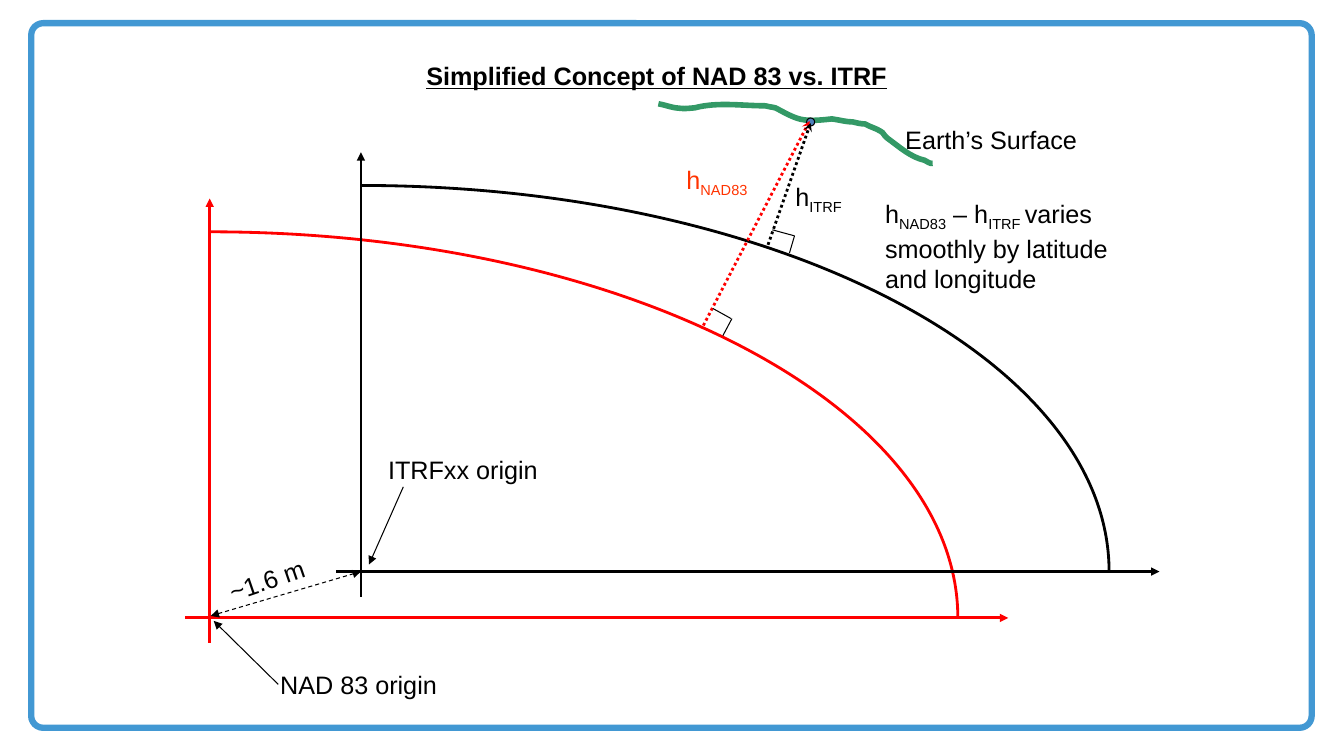
"""Draws the simplified NAD 83 and ITRF reference frame diagram."""
from dataclasses import dataclass

from pptx import Presentation
from pptx.dml.color import RGBColor
from pptx.enum.dml import MSO_LINE as Dash
from pptx.enum.shapes import MSO_CONNECTOR as Connector, MSO_SHAPE as Shape
from pptx.enum.text import MSO_AUTO_SIZE as AutoSize
from pptx.oxml import parse_xml
from pptx.oxml.ns import nsdecls, qn
from pptx.util import Inches, Pt


@dataclass(frozen=True)
class Theme:
    """Colours, font and sizes."""
    black: str = "000000"
    red: str = "FF0000"
    orange: str = "FF3300"
    green: str = "339966"
    marker: str = "4F81BD"
    border: str = "4298D3"
    font: str = "Arial"
    text: float = 18
    thin: float = 0.75
    bold: float = 2
    surface: float = 4
    frame: float = 4.5


THEME = Theme()

FRAMES = [((2.08, 6.13), THEME.red), ((3.58, 5.67), THEME.black)]
ARC_WIDTH, ARC_HEIGHT = 7.42, 3.83
AXIS_RIGHT, AXIS_UP, AXIS_TAIL = 7.92, 4.16, 0.25
BEZIER_X, BEZIER_Y = 4.1, 2.11

SURFACE = [
    (6.53, 1.03), (6.59, 1.04), (6.64, 1.06), (6.7, 1.07),
    (6.8, 1.08), (6.77, 1.08), (6.89, 1.07), (7.12, 1.01), (7.36, 1.05), (7.59, 1.05),
    (7.62, 1.06), (7.65, 1.06), (7.69, 1.07), (7.77, 1.11), (7.88, 1.18), (7.98, 1.19),
    (8.06, 1.2), (8.16, 1.19), (8.25, 1.18), (8.33, 1.19), (8.39, 1.21), (8.46, 1.21),
    (8.5, 1.22), (8.54, 1.23), (8.58, 1.23), (8.63, 1.26), (8.68, 1.27), (8.73, 1.3),
    (8.77, 1.32), (8.76, 1.34), (8.8, 1.37), (8.91, 1.45), (9.03, 1.56), (9.17, 1.59),
    (9.19, 1.6), (9.23, 1.63), (9.25, 1.62),
]

DOTTED = dict(width=THEME.bold, dash=Dash.ROUND_DOT, head="stealth")
LINES = [
    ((2.09, 6.11), (3.58, 5.67), dict(dash=Dash.DASH, head="triangle", tail="triangle")),
    ((8.03, 1.2), (6.96, 3.26), dict(color=THEME.red, **DOTTED)),
    ((7.17, 3.33), (7.26, 3.16), {}),
    ((7.07, 3.06), (7.25, 3.16), {}),
    ((7.83, 2.51), (7.88, 2.34), {}),
    ((7.66, 2.28), (7.88, 2.34), {}),
    ((8.04, 1.22), (7.61, 2.45), DOTTED),
    ((4, 4.83), (3.66, 5.6), dict(tail="triangle")),
    ((2.76, 6.79), (2.12, 6.16), dict(tail="triangle")),
]

NORMAL, SUB = 0, -25000
LABELS = [
    ((2.16, 5.55, 0.98, 0.4), [[("~1.6 m", NORMAL)]], dict(rotation=340.9)),
    ((2.68, 6.59, 1.76, 0.4), [[("NAD 83 origin", NORMAL)]], {}),
    ((3.75, 4.46, 1.69, 0.4), [[("ITRFxx origin", NORMAL)]], {}),
    ((8.88, 1.18, 1.91, 0.4), [[("Earth’s Surface", NORMAL)]], {}),
    ((6.71, 1.58, 0.88, 0.4), [[("h", NORMAL), ("NAD83", SUB)]], dict(color=THEME.orange)),
    ((7.79, 1.75, 0.71, 0.4), [[("h", NORMAL), ("ITRF", SUB)]], {}),
    ((4.13, 0.55, 4.77, 0.4), [[("Simplified Concept of NAD 83 vs. ITRF", NORMAL)]],
     dict(title=True)),
    ((8.68, 1.92, 2.48, 1), [
        [("h", NORMAL), ("NAD83", SUB), (" – h", NORMAL), ("ITRF ", SUB), ("varies", NORMAL)],
        [("smoothly by latitude", NORMAL)],
        [("and longitude", NORMAL)],
    ], {}),
]


def style_outline(shape, color, width):
    """Give a shape a plain outline without a shadow."""
    shape.shadow.inherit = False
    shape.line.color.rgb = RGBColor.from_string(color)
    shape.line.width = Pt(width)


def add_shape(shapes, kind, box, color, width):
    """Add an unfilled preset shape."""
    shape = shapes.add_shape(kind, *map(Inches, box))
    shape.fill.background()
    style_outline(shape, color, width)
    return shape


def add_curve(shapes, points, color, width):
    """Add an open curve whose points after the first come in Bezier triples."""
    start, *rest = [(Inches(x), Inches(y)) for x, y in points]
    builder = shapes.build_freeform(*start)
    builder.add_line_segments(rest, close=False)
    curve = builder.convert_to_shape()
    curve.fill.background()
    style_outline(curve, color, width)
    segments = list(curve._element.iter(qn("a:lnTo")))
    for index in range(0, len(segments), 3):
        bezier = parse_xml(f"<a:cubicBezTo {nsdecls('a')}/>")
        segments[index].addprevious(bezier)
        for segment in segments[index:index + 3]:
            bezier.append(segment[0])
            segment.getparent().remove(segment)


def add_line(shapes, start, end, color=THEME.black, width=THEME.thin,
             dash=None, head=None, tail=None):
    """Add a straight line with optional dashes and arrowheads."""
    line = shapes.add_connector(Connector.STRAIGHT, *map(Inches, start + end))
    line.line.color.rgb = RGBColor.from_string(color)
    line.line.width = Pt(width)
    if dash:
        line.line.dash_style = dash
    properties = line._element.spPr
    outline = properties.find(qn("a:ln"))
    for tag, arrow in (("headEnd", head), ("tailEnd", tail)):
        if arrow:
            outline.append(parse_xml(f'<a:{tag} {nsdecls("a")} type="{arrow}"/>'))
    properties.append(parse_xml(f"<a:effectLst {nsdecls('a')}/>"))


def add_frame(slide, origin, color):
    """Add a quarter ellipse with its two axes as one group."""
    x, y = origin
    shapes = slide.shapes.add_group_shape().shapes
    top, right = y - ARC_HEIGHT, x + ARC_WIDTH
    arc = [(x, top), (x + BEZIER_X, top), (right, y - BEZIER_Y), (right, y)]
    add_curve(shapes, arc, color, THEME.bold)
    axes = [((x, y - AXIS_UP), (x, y + AXIS_TAIL)),
            ((x + AXIS_RIGHT, y), (x - AXIS_TAIL, y))]
    for start, end in axes:
        add_line(shapes, start, end, color, THEME.bold, head="triangle")


def add_label(slide, box, paragraphs, color=THEME.black, title=False, rotation=0):
    """Add a text box with normal and subscript runs."""
    label = slide.shapes.add_textbox(*map(Inches, box))
    label.rotation = rotation
    frame = label.text_frame
    frame.word_wrap = False
    frame.auto_size = AutoSize.SHAPE_TO_FIT_TEXT
    for index, runs in enumerate(paragraphs):
        paragraph = frame.add_paragraph() if index else frame.paragraphs[0]
        for text, baseline in runs:
            run = paragraph.add_run()
            run.text = text
            font = run.font
            font.name, font.size = THEME.font, Pt(THEME.text)
            font.color.rgb = RGBColor.from_string(color)
            if title:
                font.bold = font.underline = True
            if baseline:
                run._r.get_or_add_rPr().set("baseline", str(baseline))


def main():
    """Build and save the slide."""
    presentation = Presentation()
    presentation.slide_width, presentation.slide_height = Inches(13.33), Inches(7.5)
    slide = presentation.slides.add_slide(presentation.slide_layouts[6])
    shapes = slide.shapes
    border = add_shape(shapes, Shape.ROUNDED_RECTANGLE, (0.31, 0.23, 12.7, 6.99),
                       THEME.border, THEME.frame)
    border.adjustments[0] = 0.017
    for origin, color in FRAMES:
        add_frame(slide, origin, color)
    add_curve(shapes, SURFACE, THEME.green, THEME.surface)
    marker = add_shape(shapes, Shape.OVAL, (8, 1.17, 0.08, 0.08), THEME.black, THEME.thin)
    marker.fill.solid()
    marker.fill.fore_color.rgb = RGBColor.from_string(THEME.marker)
    for start, end, style in LINES:
        add_line(shapes, start, end, **style)
    for box, paragraphs, style in LABELS:
        add_label(slide, box, paragraphs, **style)
    presentation.save("out.pptx")


if __name__ == "__main__":
    main()
